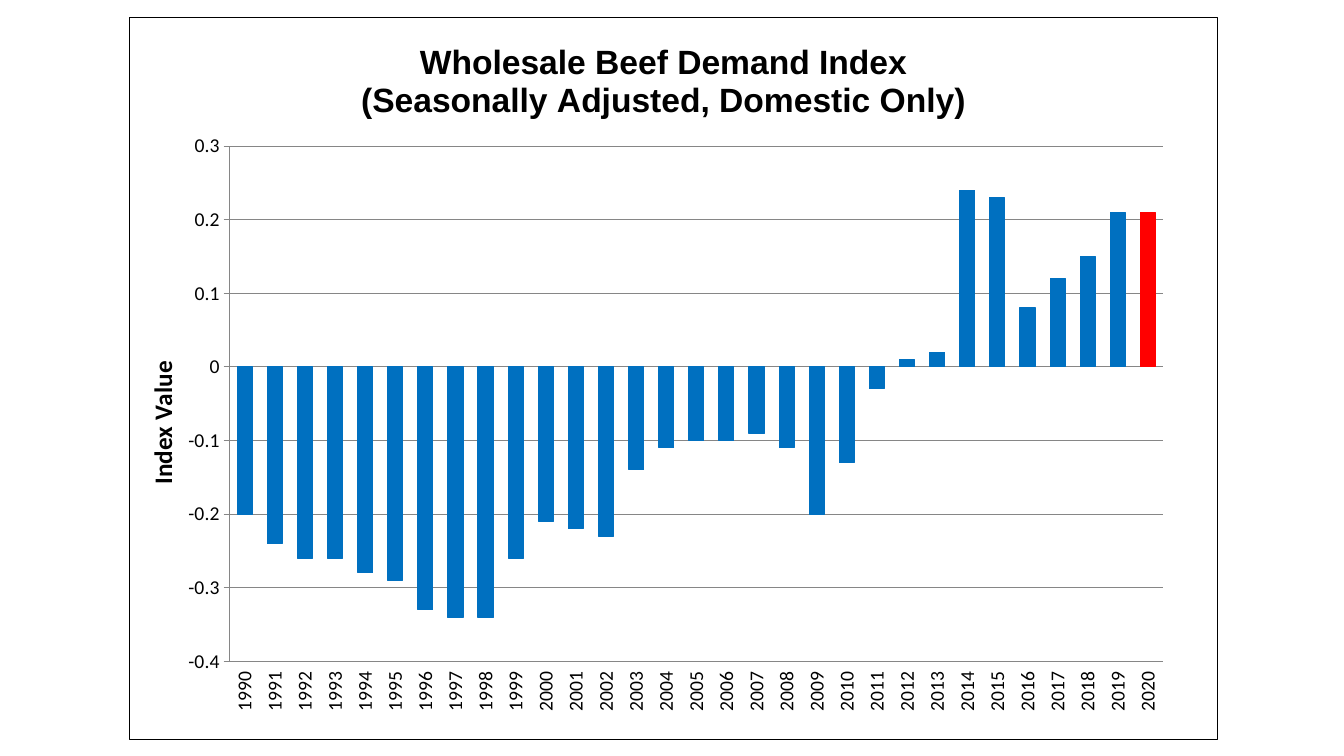
from lxml import etree
from pptx import Presentation
from pptx import util as u
from pptx.chart.data import CategoryChartData
from pptx.dml.color import RGBColor
from pptx.enum import chart as kinds
from pptx.oxml import parse_xml
from pptx.oxml.ns import nsdecls, qn

PX = 9144  # one hundredth of an inch
BLACK, BLUE, RED, GREY = "000000", "0070C0", "FF0000", "868686"
YEARS = range(1990, 2021)
INDEX = [-0.2, -0.24, -0.26, -0.26, -0.28, -0.29, -0.33, -0.34, -0.34, -0.26,
         -0.21, -0.22, -0.23, -0.14, -0.11, -0.1, -0.1, -0.09, -0.11, -0.2,
         -0.13, -0.03, 0.01, 0.02, 0.24, 0.23, 0.08, 0.12, 0.15, 0.21, 0.21]


def px(length):
    return u.Emu(length * PX)


def color(value):
    return RGBColor.from_string(value)


def style_font(font, size, name="Calibri", bold=False):
    font.size, font.name, font.bold = u.Pt(size), name, bold
    font.color.rgb = color(BLACK)


def style_line(line, value):
    line.color.rgb = color(value)
    line.width = u.Pt(0.75)


def make_layout(**values):
    layout = parse_xml(f"<c:layout {nsdecls('c')}><c:manualLayout/></c:layout>")
    for tag, value in values.items():
        etree.SubElement(layout[0], qn(f"c:{tag}")).set("val", str(value))
    return layout


def replace_layout(parent, layout, position):
    for old in parent.findall(qn("c:layout")):
        parent.remove(old)
    parent.insert(position, layout)


def rotate_text(element):
    for body in element.iter(qn("a:bodyPr")):
        body.set("rot", "-5400000")
        body.set("vert", "horz")


def write_title(title, lines, size, font_name, x, y):
    frame = title.text_frame
    frame.text = "\n".join(lines)
    for para in frame.paragraphs:
        style_font(para.font, size, font_name, True)
        for span in para.runs:
            style_font(span.font, size, font_name, True)
    # The layout follows the title text
    replace_layout(title._element,
                   make_layout(xMode="edge", yMode="edge", x=x, y=y), 1)


def format_axes(chart):
    years, values = chart.category_axis, chart.value_axis
    for axis in (years, values):
        style_font(axis.tick_labels.font, 14)
        style_line(axis.format.line, GREY)
        axis.minor_tick_mark = kinds.XL_TICK_MARK.NONE
    years.major_tick_mark = kinds.XL_TICK_MARK.NONE
    years.tick_label_position = kinds.XL_TICK_LABEL_POSITION.LOW
    rotate_text(years._element)

    values.minimum_scale, values.maximum_scale, values.major_unit = -0.4, 0.3, 0.1
    values.major_tick_mark = kinds.XL_TICK_MARK.OUTSIDE
    values.has_major_gridlines = True
    style_line(values.major_gridlines.format.line, GREY)
    write_title(values.axis_title, ["Index Value"], 18, "Calibri", 0.01, 0.47)
    rotate_text(values.axis_title._element)


def format_bars(chart):
    plot = chart.plots[0]
    plot.gap_width = 100
    plot.vary_by_categories = False
    bars = plot.series[0]
    bars.invert_if_negative = False
    latest = bars.points[len(INDEX) - 1]
    for part, value in ((bars, BLUE), (latest, RED)):
        part.format.fill.solid()
        part.format.fill.fore_color.rgb = color(value)
        style_line(part.format.line, value)


def add_border(chart):
    border = parse_xml(
        f'<c:spPr {nsdecls("c", "a")}><a:noFill/><a:ln w="9525"><a:solidFill>'
        f'<a:srgbClr val="{BLACK}"/></a:solidFill></a:ln></c:spPr>')
    chart._chartSpace.find(qn("c:chart")).addnext(border)


def add_demand_chart(page):
    data = CategoryChartData()
    data.categories = [str(year) for year in YEARS]
    data.add_series("Series 1", INDEX)
    chart = page.shapes.add_chart(
        kinds.XL_CHART_TYPE.COLUMN_CLUSTERED,
        px(128), px(17), px(1080), px(717), data).chart
    chart.has_legend = False
    style_font(chart.font, 18)
    write_title(chart.chart_title,
                ["Wholesale Beef Demand Index", "(Seasonally Adjusted, Domestic Only)"],
                24, "Arial", 0.21, 0.03)
    format_axes(chart)
    format_bars(chart)
    add_border(chart)
    # Inner plot area, as shares of the chart
    plot_area = chart._chartSpace.find(".//" + qn("c:plotArea"))
    replace_layout(plot_area, make_layout(
        layoutTarget="inner", xMode="edge", yMode="edge",
        x=0.092, y=0.178, w=0.858, h=0.714), 0)


def main():
    deck = Presentation()
    deck.slide_width, deck.slide_height = px(1333), px(750)
    page = deck.slides.add_slide(deck.slide_layouts[6])
    add_demand_chart(page)
    deck.save("out.pptx")


if __name__ == "__main__":
    main()
